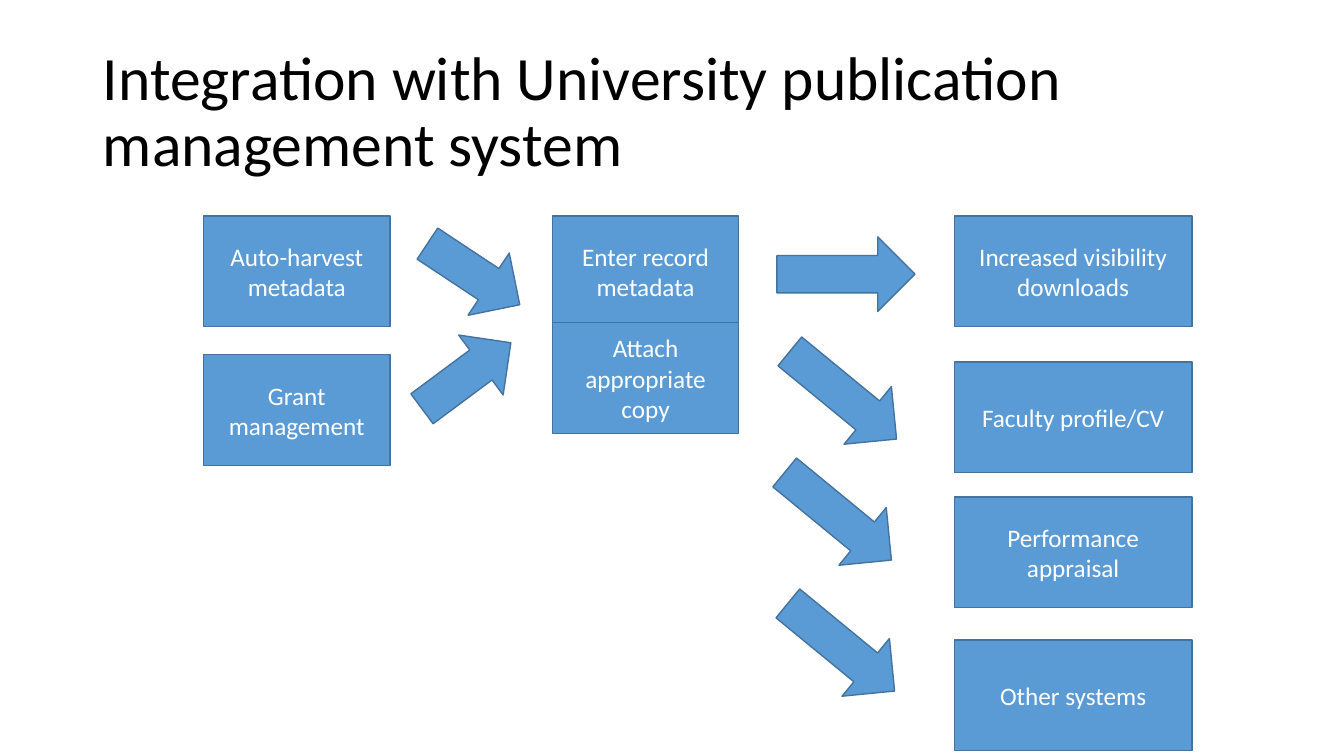
from pptx import Presentation
from pptx.dml.color import RGBColor
from pptx.enum.shapes import MSO_SHAPE as SHAPE
from pptx.enum.text import MSO_ANCHOR as ANCHOR, PP_ALIGN as ALIGN
from pptx.util import Cm, Pt

TITLE = "Integration with University publication management system"
COLORS = {"fill": "5B9BD5", "line": "43739E", "title": "000000", "label": "FFFFFF"}
FONT = "Calibri"
BOX_HEIGHT, ARROW_HEIGHT = 2.79, 1.88

# Each column: left, width, [(top, label)]
COLUMNS = [
    (5.13, 4.7, [(5.44, "Auto-harvest metadata"), (8.94, "Grant management")]),
    (13.92, 4.7, [(5.44, "Enter record metadata"), (8.13, "Attach appropriate copy")]),
    (24.05, 5.99, [
        (5.44, "Increased visibility downloads"),
        (9.12, "Faculty profile/CV"),
        (12.52, "Performance appraisal"),
        (16.13, "Other systems"),
    ]),
]
# Each group: width, [(left, top, rotation)]
ARROWS = [
    (2.79, [(10.54, 5.97, 33.5), (10.36, 8.53, 323.4)]),
    (3.48, [(19.58, 5.97, 0), (19.51, 9.02, 39.4), (19.38, 12.07, 39.4), (19.46, 15.37, 39.4)]),
]


def color(name):
    return RGBColor.from_string(COLORS[name])


def set_text(sp, text, size, ink, align):
    tf = sp.text_frame
    tf.text = text
    tf.word_wrap = True
    tf.vertical_anchor = ANCHOR.MIDDLE
    p = tf.paragraphs[0]
    p.alignment = align
    font = p.runs[0].font
    font.name, font.size = FONT, Pt(size)
    font.color.rgb = color(ink)
    return p


def add_block(s, kind, left, top, width, height):
    sp = s.shapes.add_shape(kind, Cm(left), Cm(top), Cm(width), Cm(height))
    sp.shadow.inherit = False
    sp.fill.solid()
    sp.fill.fore_color.rgb = color("fill")
    sp.line.color.rgb = color("line")
    sp.line.width = Pt(1)
    return sp


def main():
    prs = Presentation()
    prs.slide_width, prs.slide_height = Cm(33.87), Cm(19.05)
    s = prs.slides.add_slide(prs.slide_layouts[5])

    title = s.shapes.title
    title.left, title.top = Cm(2.34), Cm(1.02)
    title.width, title.height = Cm(29.21), Cm(3.68)
    set_text(title, TITLE, 44, "title", ALIGN.LEFT).line_spacing = 0.9

    for left, width, boxes in COLUMNS:
        for top, label in boxes:
            sp = add_block(s, SHAPE.RECTANGLE, left, top, width, BOX_HEIGHT)
            set_text(sp, label, 18, "label", ALIGN.CENTER)

    for width, arrows in ARROWS:
        for left, top, rotation in arrows:
            sp = add_block(s, SHAPE.RIGHT_ARROW, left, top, width, ARROW_HEIGHT)
            sp.rotation = rotation

    prs.save("out.pptx")


if __name__ == "__main__":
    main()
